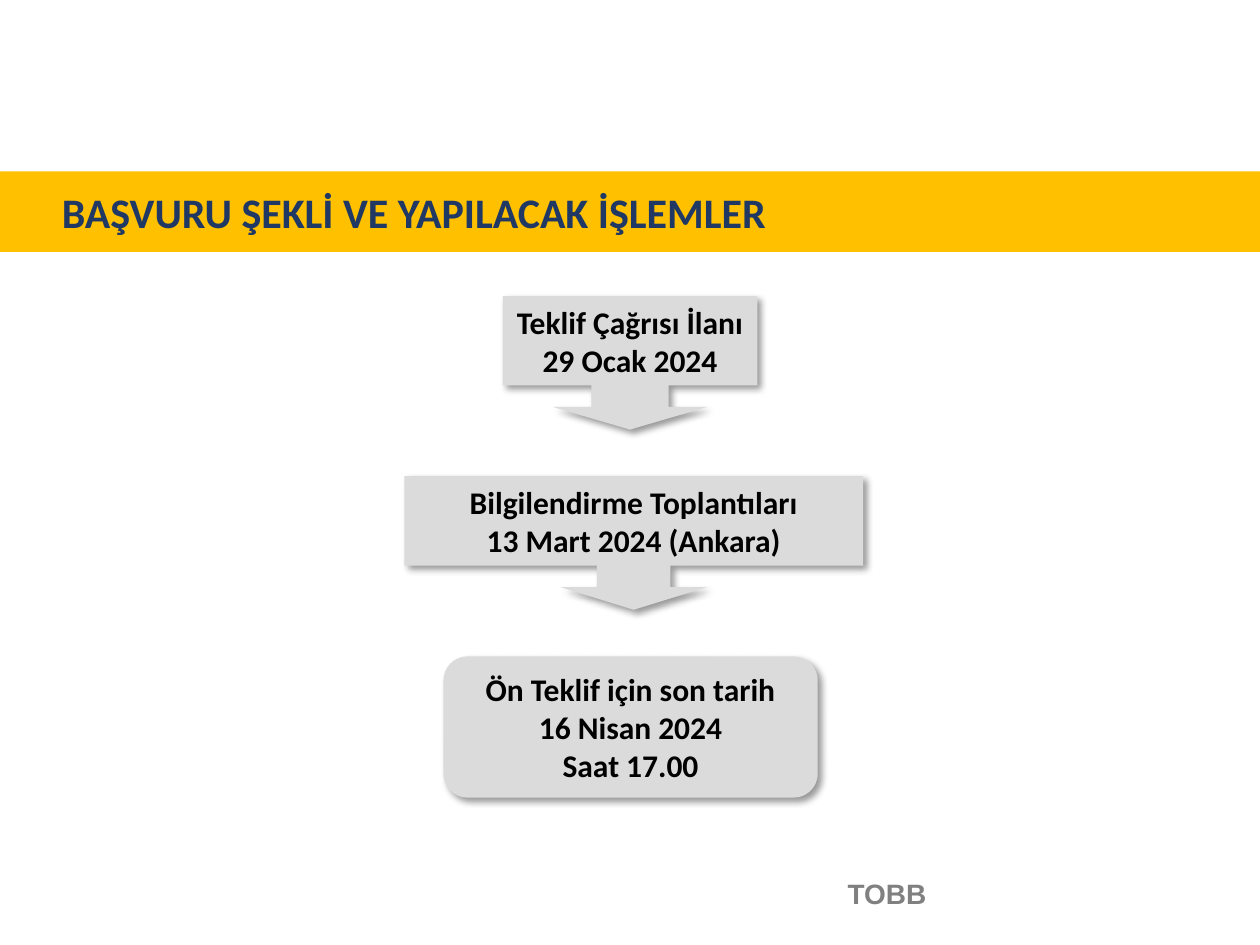
"""Build a slide showing the application steps as a downward flow."""
from lxml import etree
from pptx import Presentation
from pptx.dml.color import RGBColor
from pptx.enum.shapes import MSO_SHAPE
from pptx.enum.text import MSO_ANCHOR, PP_ALIGN
from pptx.oxml.ns import qn
from pptx.util import Inches, Pt

CALLOUT = MSO_SHAPE.DOWN_ARROW_CALLOUT
ROUNDED = MSO_SHAPE.ROUNDED_RECTANGLE
LEFT, CENTER = PP_ALIGN.LEFT, PP_ALIGN.CENTER
TOP, MIDDLE = MSO_ANCHOR.TOP, MSO_ANCHOR.MIDDLE

TITLE = "BAŞVURU ŞEKLİ VE YAPILACAK İŞLEMLER"
FOOTER = "TOBB"
STEPS = [
    (CALLOUT, (3.99, 2.02, 1.06), (0.58, 0.58, 0.17, 0.67), False,
     ["Teklif Çağrısı İlanı", "29 Ocak 2024"]),
    (CALLOUT, (3.21, 3.64, 1.06), (0.55, 0.55, 0.17, 0.67), True,
     ["Bilgilendirme Toplantıları", "13 Mart 2024 (Ankara)"]),
    (ROUNDED, (3.52, 2.97, 1.12), (0.17,), True,
     ["Ön Teklif için son tarih", "16 Nisan 2024", "Saat 17.00"]),
]
FIRST_TOP, STEP_PITCH = 2.35, 1.43


def color(code):
    return RGBColor.from_string(code)


def fill_shape(shape, code):
    shape.fill.solid()
    shape.fill.fore_color.rgb = color(code)
    shape.line.fill.background()


def write(box, lines, size, ink, font="Calibri", align=LEFT, anchor=TOP,
          wrap=True, side=0.1, edge=0.05):
    frame = box.text_frame
    frame.word_wrap = wrap
    frame.vertical_anchor = anchor
    frame.margin_left, frame.margin_right = Inches(side), Inches(0.1)
    frame.margin_top = frame.margin_bottom = Inches(edge)
    for index, line in enumerate(lines):
        para = frame.add_paragraph() if index else frame.paragraphs[0]
        para.alignment = align
        span = para.add_run()
        span.text = line
        span.font.name = font
        span.font.size = Pt(size)
        span.font.bold = True
        span.font.color.rgb = color(ink)


def add_shadow(shape):
    shape.shadow.inherit = False
    effects = shape.element.spPr.find(qn("a:effectLst"))
    shadow = etree.SubElement(
        effects, qn("a:outerShdw"), blurRad=str(Pt(4)), dist=str(Pt(3)),
        dir=str(45 * 60000), algn="tl", rotWithShape="0")
    tint = etree.SubElement(shadow, qn("a:srgbClr"), val="000000")
    etree.SubElement(tint, qn("a:alpha"), val="40000")


def main():
    deck = Presentation()
    deck.slide_width, deck.slide_height = Inches(10), Inches(7.5)
    page = deck.slides.add_slide(deck.slide_layouts[5])

    title = page.shapes.title
    title.left, title.top = Inches(0), Inches(1.36)
    title.width, title.height = Inches(10), Inches(0.64)
    fill_shape(title, "FFC000")
    write(title, [TITLE], 24, "203864", side=0.49, edge=0.12)

    footer = page.shapes.add_textbox(
        Inches(6.63), Inches(6.91), Inches(0.83), Inches(0.32))
    write(footer, [FOOTER], 16, "808080", font="Arial", wrap=False)

    for index, (kind, place, adjustments, wrap, lines) in enumerate(STEPS):
        left, width, height = place
        step = page.shapes.add_shape(
            kind, Inches(left), Inches(FIRST_TOP + index * STEP_PITCH),
            Inches(width), Inches(height))
        for number, value in enumerate(adjustments):
            step.adjustments[number] = value
        fill_shape(step, "DBDBDB")
        add_shadow(step)
        write(step, lines, 18, "000000", align=CENTER, anchor=MIDDLE, wrap=wrap)

    deck.save("out.pptx")


if __name__ == "__main__":
    main()
